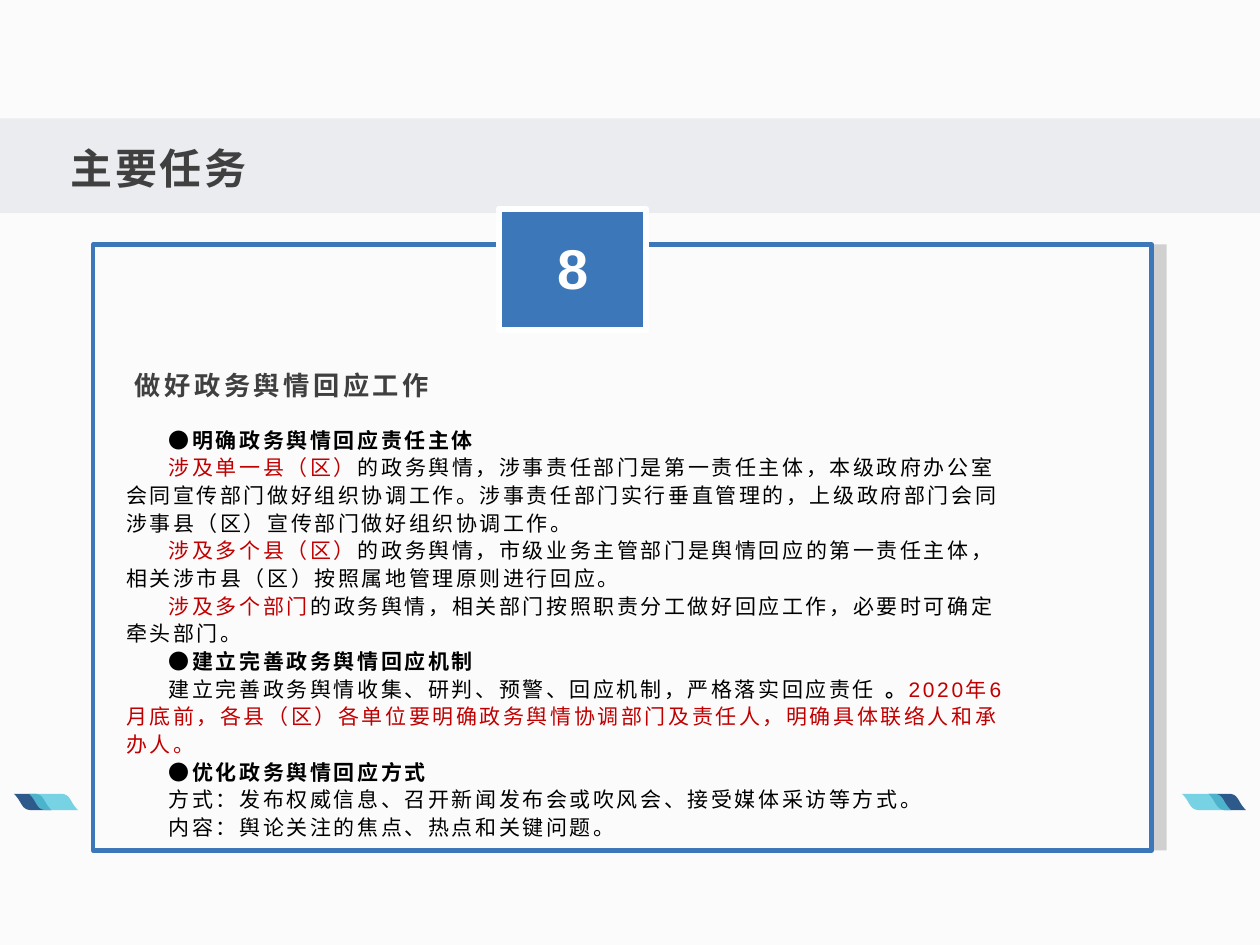
from dataclasses import dataclass
from typing import NamedTuple

from lxml.etree import SubElement
from pptx import Presentation
from pptx.dml.color import RGBColor
from pptx.enum.shapes import MSO_SHAPE
from pptx.enum.text import MSO_ANCHOR, PP_ALIGN
from pptx.oxml.ns import qn
from pptx.util import Inches, Pt

CELL = Inches(0.1)  # the slide is a grid of 100 columns by 75 rows
COLUMNS, ROWS = 100, 75


@dataclass(frozen=True)
class Theme:
    font: str = "Arial"
    paper: str = "FBFBFC"
    band: str = "EAECEF"
    heading: str = "404040"
    ink: str = "000000"
    accent: str = "C00000"
    blue: str = "3C78B9"
    white: str = "FFFFFF"
    shade: str = "BFBFBF"
    navy: str = "2D5A8B"
    aqua: str = "56C8DD"
    title_size: float = 24
    number_size: float = 32
    subtitle_size: float = 15
    body_size: float = 12


class Box(NamedTuple):
    column: float
    row: float
    columns: float
    rows: float

    def emu(self) -> list[int]:
        return [round(cells * CELL) for cells in self]


class Span(NamedTuple):
    text: str
    color: str
    bold: bool = False


class Leaf(NamedTuple):
    column: float
    columns: float
    color: str
    opacity: int = 100


THEME = Theme()
LEAF_ROW = 63
LEAVES = [
    Leaf(1.1, 3, THEME.navy),
    Leaf(2.3, 3.9, THEME.aqua, 80),
    Leaf(95.9, 3, THEME.navy),
    Leaf(93.8, 3.9, THEME.aqua, 80),
]


def plain(text: str) -> Span:
    return Span(text, THEME.ink)


def strong(text: str) -> Span:
    return Span(text, THEME.ink, True)


def red(text: str) -> Span:
    return Span(text, THEME.accent)


BODY = [
    [strong("●明确政务舆情回应责任主体")],
    [red("涉及单一县（区）"),
     plain("的政务舆情，涉事责任部门是第一责任主体，本级政府办公室会同宣传部门做好组织协调工作。"
           "涉事责任部门实行垂直管理的，上级政府部门会同涉事县（区）宣传部门做好组织协调工作。")],
    [red("涉及多个县（区）"),
     plain("的政务舆情，市级业务主管部门是舆情回应的第一责任主体，"
           "相关涉市县（区）按照属地管理原则进行回应。")],
    [red("涉及多个部门"),
     plain("的政务舆情，相关部门按照职责分工做好回应工作，必要时可确定牵头部门。")],
    [strong("●建立完善政务舆情回应机制")],
    [plain("建立完善政务舆情收集、研判、预警、回应机制，严格落实回应责任"),
     strong(" 。"),
     red("2020年6月底前，各县（区）各单位要明确政务舆情协调部门及责任人，"
         "明确具体联络人和承办人。")],
    [strong("●优化政务舆情回应方式")],
    [plain("方式：发布权威信息、召开新闻发布会或吹风会、接受媒体采访等方式。")],
    [plain("内容：舆论关注的焦点、热点和关键问题。")],
]


def paint(shape, color: str, opacity: int = 100) -> None:
    shape.shadow.inherit = False
    shape.fill.solid()
    shape.fill.fore_color.rgb = RGBColor.from_string(color)
    if opacity < 100:
        srgb = shape.fill._xPr.find(qn("a:solidFill")).find(qn("a:srgbClr"))
        SubElement(srgb, qn("a:alpha")).set("val", str(opacity * 1000))


def add_panel(slide, box: Box, color: str, opacity: int = 100,
              border: str | None = None, border_width: float = 0) -> None:
    panel = slide.shapes.add_shape(MSO_SHAPE.RECTANGLE, *box.emu())
    paint(panel, color, opacity)
    if border:
        panel.line.color.rgb = RGBColor.from_string(border)
        panel.line.width = Pt(border_width)
    else:
        panel.line.fill.background()


def cubic(start, control1, control2, end, steps: int = 8):
    """Points along a Bezier curve, without its start."""
    for step in range(1, steps + 1):
        t = step / steps
        weights = ((1 - t) ** 3, 3 * t * (1 - t) ** 2, 3 * t * t * (1 - t), t ** 3)
        knots = (start, control1, control2, end)
        yield tuple(sum(w * knot[axis] for w, knot in zip(weights, knots))
                    for axis in (0, 1))


def add_leaf(slide, leaf: Leaf) -> None:
    """Draw a slanted leaf; its lower half is the upper half turned by 180 degrees."""
    width, height = leaf.columns, 1.3
    shoulder, middle, tip = (width - 1.3, 0), (width - 0.5, 0.65), (width, height)
    upper = [shoulder,
             *cubic(shoulder, (width - 0.9, 0.05), (width - 0.75, 0.2), middle),
             *cubic(middle, (width - 0.25, 1.1), tip, tip)]
    lower = [(width - x, height - y) for x, y in upper]
    outline = [(round((leaf.column + x) * CELL), round((LEAF_ROW + y) * CELL))
               for x, y in upper + lower]
    builder = slide.shapes.build_freeform(*outline[0])
    builder.add_line_segments(outline[1:], close=True)
    shape = builder.convert_to_shape()
    paint(shape, leaf.color, leaf.opacity)
    shape.line.fill.background()


def add_text(slide, box: Box, paragraphs: list[list[Span]], *, size: float,
             tracking: float = 0, line_spacing: float = 1.0, indent: float = 0,
             align=PP_ALIGN.LEFT, anchor=MSO_ANCHOR.TOP,
             insets: tuple[float, float] = (0.7, 0.4)) -> None:
    frame = slide.shapes.add_textbox(*box.emu()).text_frame
    frame.word_wrap = True
    frame.vertical_anchor = anchor
    frame.margin_left = frame.margin_right = round(insets[0] * CELL)
    frame.margin_top = frame.margin_bottom = round(insets[1] * CELL)
    for index, spans in enumerate(paragraphs):
        paragraph = frame.add_paragraph() if index else frame.paragraphs[0]
        paragraph.alignment = align
        paragraph.line_spacing = line_spacing
        if indent:
            paragraph._p.get_or_add_pPr().set("indent", str(round(indent * CELL)))
        for span in spans:
            run = paragraph.add_run()
            run.text = span.text
            run.font.name = THEME.font
            run.font.size = Pt(size)
            run.font.bold = span.bold
            run.font.color.rgb = RGBColor.from_string(span.color)
            run._r.get_or_add_rPr().set("spc", str(round(tracking * 100)))


def main() -> None:
    deck = Presentation()
    deck.slide_width, deck.slide_height = COLUMNS * CELL, ROWS * CELL
    slide = deck.slides.add_slide(deck.slide_layouts[6])
    slide.background.fill.solid()
    slide.background.fill.fore_color.rgb = RGBColor.from_string(THEME.paper)

    add_panel(slide, Box(0, 9.4, COLUMNS, 7.5), THEME.band)
    for leaf in LEAVES:
        add_leaf(slide, leaf)
    add_text(slide, Box(5, 10.6, 90, 5), [[Span("主要任务", THEME.heading, True)]],
             size=THEME.title_size, tracking=1.5, anchor=MSO_ANCHOR.BOTTOM,
             insets=(0.6, 0.3))

    card = Box(7.4, 19.4, 84, 48.1)
    add_panel(slide, card._replace(column=card.column + 1.2), THEME.shade, 70)
    add_panel(slide, card, THEME.paper, border=THEME.blue, border_width=2.5)
    add_panel(slide, Box(39.6, 16.6, 11.7, 9.6), THEME.blue,
              border=THEME.white, border_width=3.5)
    add_text(slide, Box(40.3, 17.1, 10.3, 9.2), [[Span("8", THEME.white, True)]],
             size=THEME.number_size, line_spacing=1.2, align=PP_ALIGN.CENTER)

    add_text(slide, Box(9.3, 33.3, 72.1, 34.2), BODY, size=THEME.body_size,
             tracking=1.5, line_spacing=1.1, indent=3.4)
    add_text(slide, Box(9.3, 28.4, 72.1, 4.9),
             [[Span("做好政务舆情回应工作", THEME.heading, True)]],
             size=THEME.subtitle_size, tracking=2, line_spacing=1.2, indent=0.7)
    deck.save("out.pptx")


if __name__ == "__main__":
    main()
